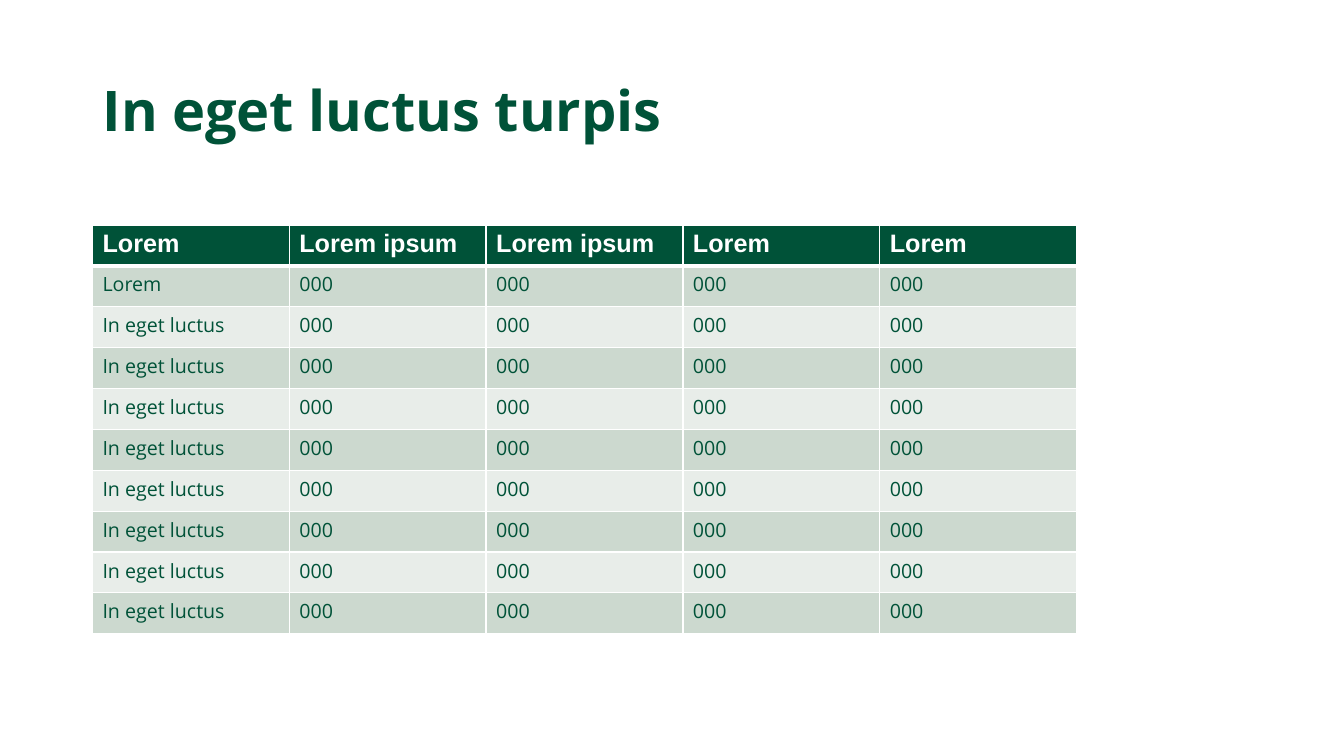
from pptx import Presentation
from pptx import util as u
from pptx.dml import color
from pptx.enum import text
from pptx.oxml import ns
from lxml import etree

GREEN, WHITE = "005238", "FFFFFF"
BANDS = ["CCD9CF", "E8EDE9"]
HEADINGS = ["Lorem", "Lorem ipsum", "Lorem ipsum", "Lorem", "Lorem"]
ROW_LABELS = ["Lorem"] + ["In eget luctus"] * 8
LEFT, WIDTH = u.Cm(2.33), u.Cm(24.8)
ROW_HEIGHT = u.Cm(1.03)


def rgb(value):
    """Turn a hex string into a colour."""
    return color.RGBColor.from_string(value)


def style_text(paragraph, font_name, size, colour, bold):
    """Format every run of a paragraph."""
    for run in paragraph.runs:
        run.font.name = font_name
        run.font.size = u.Pt(size)
        run.font.bold = bold
        run.font.color.rgb = rgb(colour)


def add_border(cell, side, points):
    """Draw a white line on one side of a cell."""
    properties = cell._tc.get_or_add_tcPr()
    line = etree.SubElement(properties, ns.qn(f"a:ln{side}"), w=str(u.Pt(points)))
    fill = etree.SubElement(line, ns.qn("a:solidFill"))
    etree.SubElement(fill, ns.qn("a:srgbClr"), val=WHITE)


def fill_cell(cell, content, row):
    """Set the text, borders and fill that belong to a cell's row."""
    cell.text = content
    for side in "LRTB":
        thick = (row, side) in [(0, "B"), (1, "T")]
        add_border(cell, side, 3 if thick else 1)
    cell.fill.solid()
    cell.fill.fore_color.rgb = rgb(BANDS[(row - 1) % 2] if row else GREEN)
    paragraph = cell.text_frame.paragraphs[0]
    if row:
        style_text(paragraph, "Open Sans", 14, GREEN, False)
    else:
        style_text(paragraph, "Arial", 18, WHITE, True)


def add_data_table(slide):
    """Add the banded table under the title."""
    rows = [HEADINGS] + [[label] + ["000"] * 4 for label in ROW_LABELS]
    frame = slide.shapes.add_table(len(rows), len(HEADINGS), LEFT, u.Cm(5.67),
                                   WIDTH, ROW_HEIGHT * len(rows))
    for row, contents in enumerate(rows):
        for column, content in enumerate(contents):
            fill_cell(frame.table.cell(row, column), content, row)


def set_title(slide, content):
    """Place and format the title placeholder."""
    title = slide.shapes.title
    title.left, title.top = LEFT, u.Cm(1.98)
    title.width, title.height = WIDTH, u.Cm(3.68)
    frame = title.text_frame
    frame.text = content
    frame.word_wrap = True
    frame.vertical_anchor = text.MSO_ANCHOR.TOP
    paragraph = frame.paragraphs[0]
    paragraph.alignment = text.PP_ALIGN.LEFT
    paragraph.line_spacing = 0.9
    style_text(paragraph, "Open Sans", 40, GREEN, True)


def main():
    """Build the slide and save it."""
    presentation = Presentation()
    presentation.slide_width, presentation.slide_height = u.Cm(33.87), u.Cm(19.05)
    slide = presentation.slides.add_slide(presentation.slide_layouts[5])
    set_title(slide, "In eget luctus turpis")
    add_data_table(slide)
    presentation.save("out.pptx")


if __name__ == "__main__":
    main()
